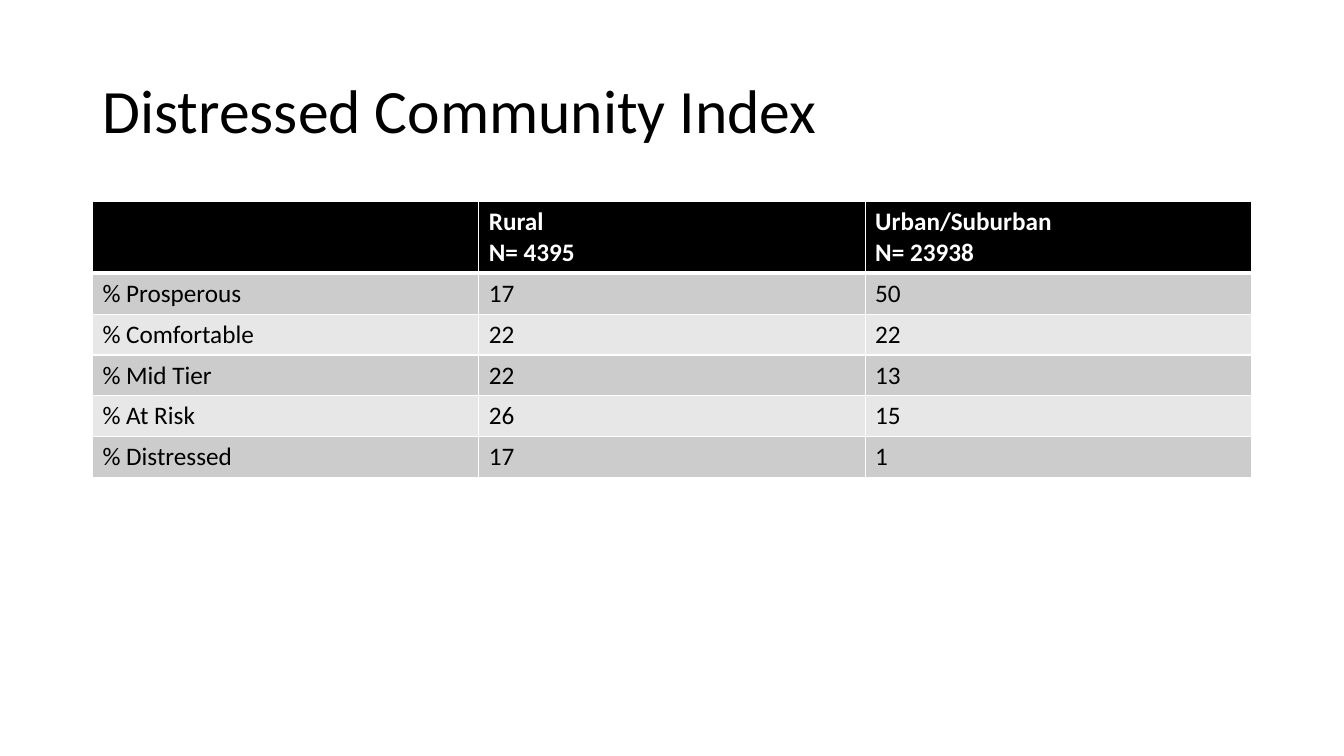
from dataclasses import dataclass

import pptx
import pptx.dml.color
import pptx.enum.text
import pptx.oxml
import pptx.oxml.ns
import pptx.util
from pptx.util import Cm


@dataclass(frozen=True)
class Theme:
    font: str = "Calibri"
    title_size: int = 44
    table_size: int = 18
    text: str = "000000"
    header_text: str = "FFFFFF"
    header_fill: str = "000000"
    bands: tuple = ("CCCCCC", "E7E7E7")
    border: str = "FFFFFF"
    thin: int = 1
    thick: int = 3


THEME = Theme()
LEFT, WIDTH = Cm(2.33), Cm(29.21)
HEADER_HEIGHT, ROW_HEIGHT = Cm(1.78), Cm(1.03)

INDEX_ROWS = [
    ("", "Rural\nN= 4395", "Urban/Suburban\nN= 23938"),
    ("% Prosperous", "17", "50"),
    ("% Comfortable", "22", "22"),
    ("% Mid Tier", "22", "13"),
    ("% At Risk", "26", "15"),
    ("% Distressed", "17", "1"),
]


def rgb(value):
    return pptx.dml.color.RGBColor.from_string(value)


def style_text(text_frame, size, color, bold=False):
    for paragraph in text_frame.paragraphs:
        for run in paragraph.runs:
            run.font.name = THEME.font
            run.font.size = pptx.util.Pt(size)
            run.font.bold = bold
            run.font.color.rgb = rgb(color)


def set_title(slide, wording):
    title = slide.shapes.title
    title.left, title.top, title.width, title.height = LEFT, Cm(1.01), WIDTH, Cm(3.68)
    frame = title.text_frame
    frame.text = wording
    frame.word_wrap = True
    frame.auto_size = pptx.enum.text.MSO_AUTO_SIZE.NONE
    frame.vertical_anchor = pptx.enum.text.MSO_ANCHOR.MIDDLE
    frame.paragraphs[0].alignment = pptx.enum.text.PP_ALIGN.LEFT
    frame.paragraphs[0].line_spacing = 0.9
    style_text(frame, THEME.title_size, THEME.text)


def set_borders(cell, top, bottom):
    """Draw all four cell borders; top and bottom are widths in points."""
    properties = cell._tc.get_or_add_tcPr()
    widths = {"lnL": THEME.thin, "lnR": THEME.thin, "lnT": top, "lnB": bottom}
    for position, (side, width) in enumerate(widths.items()):
        line = pptx.oxml.parse_xml(
            f'<a:{side} {pptx.oxml.ns.nsdecls("a")} w="{pptx.util.Pt(width)}">'
            f'<a:solidFill><a:srgbClr val="{THEME.border}"/></a:solidFill></a:{side}>'
        )
        properties.insert(position, line)


def fill_cell(cell, wording, row):
    is_header = row == 0
    cell.text_frame.text = wording
    style_text(
        cell.text_frame,
        THEME.table_size,
        THEME.header_text if is_header else THEME.text,
        bold=is_header,
    )
    cell.fill.solid()
    band = THEME.bands[(row - 1) % len(THEME.bands)]
    cell.fill.fore_color.rgb = rgb(THEME.header_fill if is_header else band)
    set_borders(
        cell,
        top=THEME.thick if row == 1 else THEME.thin,
        bottom=THEME.thick if is_header else THEME.thin,
    )


def add_index_table(slide, rows):
    columns = len(rows[0])
    height = HEADER_HEIGHT + ROW_HEIGHT * (len(rows) - 1)
    table = slide.shapes.add_table(
        len(rows), columns, LEFT, Cm(5.08), WIDTH, height
    ).table
    for column in table.columns:
        column.width = WIDTH // columns
    for row, values in enumerate(rows):
        table.rows[row].height = ROW_HEIGHT if row else HEADER_HEIGHT
        for column, wording in enumerate(values):
            fill_cell(table.cell(row, column), wording, row)


def main():
    presentation = pptx.Presentation()
    presentation.slide_width = Cm(33.87)
    presentation.slide_height = Cm(19.05)
    title_only = presentation.slide_layouts.get_by_name("Title Only")
    slide = presentation.slides.add_slide(title_only)
    set_title(slide, "Distressed Community Index")
    add_index_table(slide, INDEX_ROWS)
    presentation.save("out.pptx")


if __name__ == "__main__":
    main()
